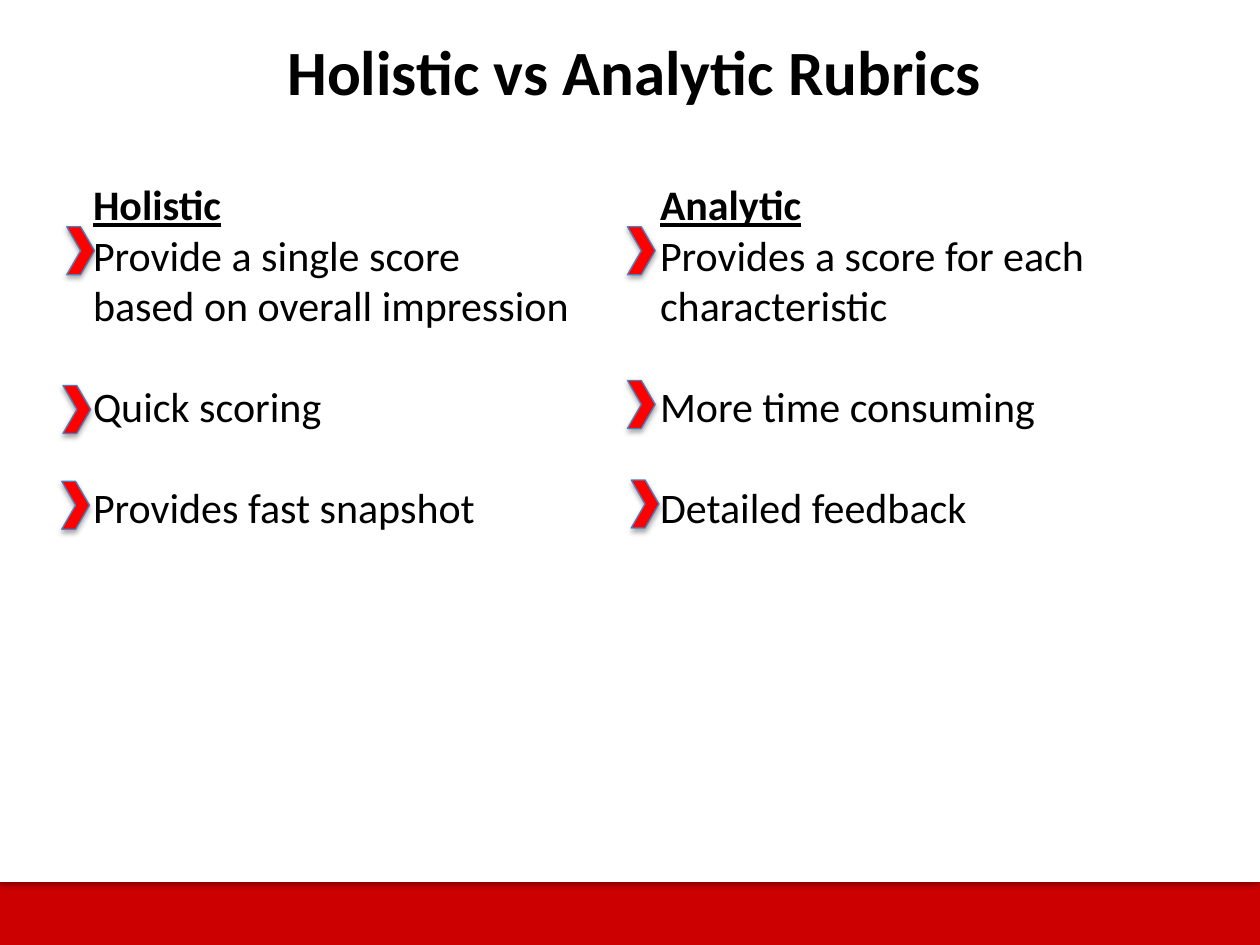
import math
from lxml import etree
from pptx import Presentation, util as u
from pptx.dml.color import RGBColor
from pptx.enum import shapes, text
from pptx.oxml import parse_xml
from pptx.oxml.ns import qn

W, H = 10, 7.5
RED, EDGE, BLACK, WHITE = "FF0000", "4B7EBC", "000000", "FFFFFF"
TITLE = "Holistic vs Analytic Rubrics"
HEADS = ("Holistic", "Analytic")
ROWS = [
    ("Provide a single score", "Provides a score for each", 0),
    ("based on overall impression", "characteristic", 0),
    ("Quick scoring", "More time consuming", 29),
    ("Provides fast snapshot", "Detailed feedback", 29),
]
MARKS = [
    [(0.53, 1.8), (0.5, 3.06), (0.49, 3.82)],
    [(4.98, 1.8), (4.98, 3.02), (5.01, 3.81)],
]
COL = 4.5
NS = "http://schemas.openxmlformats.org/drawingml/2006/main"


def color(code):
    return RGBColor.from_string(code)


def paint(shape, fill, line=None):
    shape.fill.solid()
    shape.fill.fore_color.rgb = color(fill)
    if line:
        shape.line.color.rgb = color(line)
        shape.line.width = u.Pt(0.75)
    else:
        shape.line.fill.background()
    shape.shadow.inherit = False
    glow = shape._element.spPr.find(qn("a:effectLst"))
    glow.append(parse_xml(
        f'<a:outerShdw xmlns:a="{NS}" blurRad="{u.Pt(3.1)}" dist="{u.Pt(1.8)}"'
        ' dir="5400000" rotWithShape="0"><a:srgbClr val="000000">'
        '<a:alpha val="35000"/></a:srgbClr></a:outerShdw>'))


def box(page, *place):
    frame = page.shapes.add_textbox(*map(u.Inches, place)).text_frame
    frame.word_wrap = True
    return frame


def write(para, words, size, **style):
    run = para.add_run()
    run.text = words
    look = {"name": "Calibri", "size": u.Pt(size), **style}
    for key, value in look.items():
        setattr(run.font, key, value)
    run.font.color.rgb = color(BLACK)


def add_tab(para):
    tabs = etree.SubElement(para._p.get_or_add_pPr(), qn("a:tabLst"))
    etree.SubElement(tabs, qn("a:tab"), pos=str(u.Inches(COL)), algn="l")


def panel(page):
    right, low, rx, ry = 9.75, 7, 0.94, 0.92
    turns = [math.pi / 2 * i / 40 for i in range(41)]
    curve = [(right - rx + rx * math.cos(t), low - ry + ry * math.sin(t))
             for t in turns]
    pen = page.shapes.build_freeform(0, 0, scale=u.Inches(1))
    pen.add_line_segments([(right, 0), *curve, (0, low)], close=True)
    paint(pen.convert_to_shape(), WHITE)


def main():
    deck = Presentation()
    deck.slide_width, deck.slide_height = u.Inches(W), u.Inches(H)
    page = deck.slides.add_slide(deck.slide_layouts[6])
    page.background.fill.solid()
    page.background.fill.fore_color.rgb = color("CC0000")
    panel(page)

    para = box(page, 1.43, 0.21, 7.21, 1.31).paragraphs[0]
    para.alignment = text.PP_ALIGN.CENTER
    write(para, TITLE, 36, bold=True)

    for x, y in MARKS[0] + MARKS[1]:
        mark = page.shapes.add_shape(
            shapes.MSO_SHAPE.CHEVRON, *map(u.Inches, (x, y, 0.22, 0.38)))
        paint(mark, RED, EDGE)

    body = box(page, 0.64, 1.37, 8.96, 4.14)
    head = body.paragraphs[0]
    add_tab(head)
    write(head, HEADS[0], 24, bold=True, underline=True)
    write(head, "\t", 24)
    write(head, HEADS[1], 24, bold=True, underline=True)
    for left, right, gap in ROWS:
        para = body.add_paragraph()
        add_tab(para)
        if gap:
            para.space_before = u.Pt(gap)
        write(para, f"{left}\t{right}", 24)

    deck.save("out.pptx")


if __name__ == "__main__":
    main()
